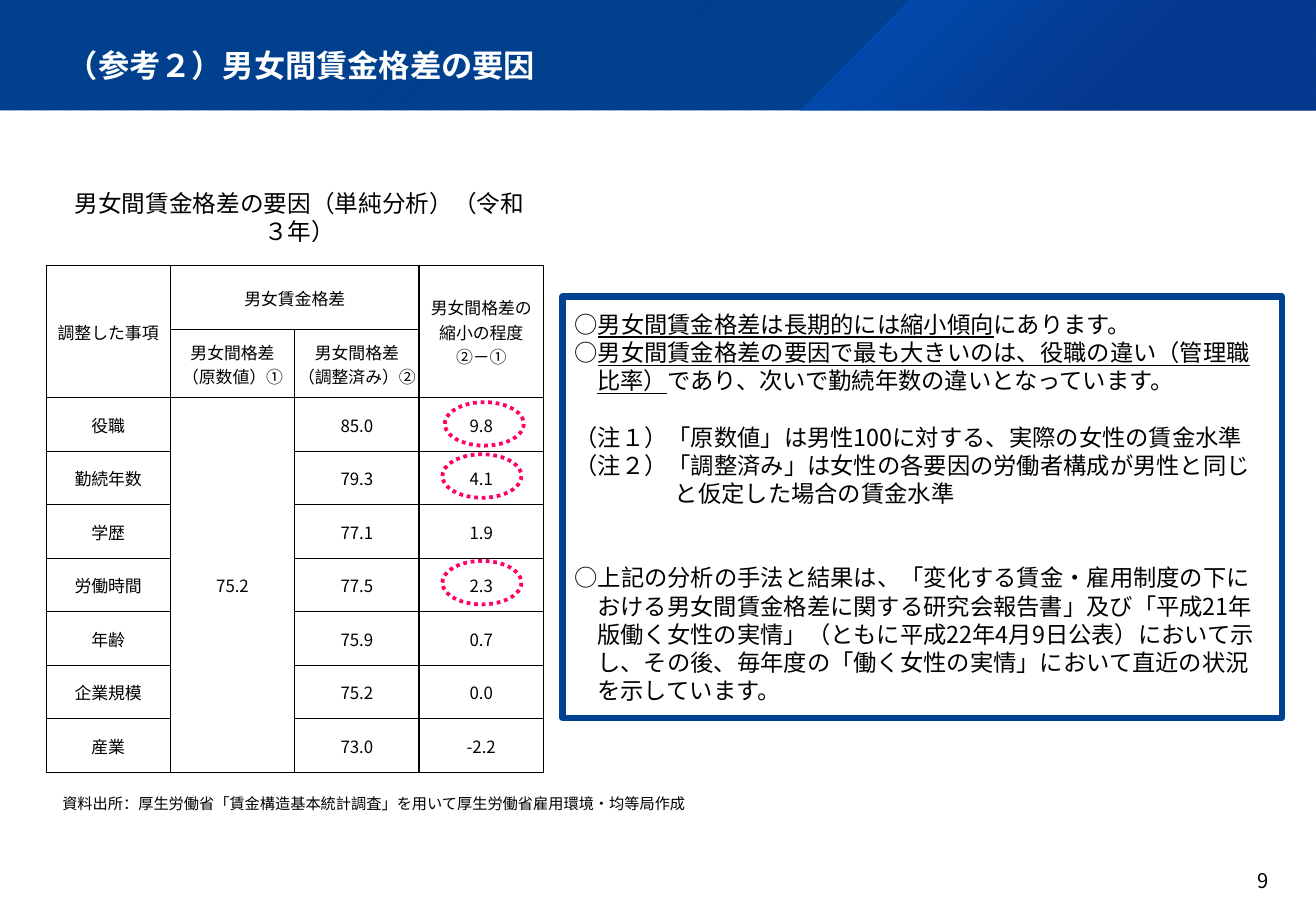
from lxml.etree import SubElement
from pptx import Presentation
from pptx.dml.color import RGBColor as RGB
from pptx.enum.dml import MSO_LINE as Dash, MSO_PATTERN as Pattern
from pptx.enum.shapes import MSO_SHAPE as Shape
from pptx.enum.text import MSO_ANCHOR as Anchor, MSO_AUTO_SIZE as Fit, PP_ALIGN as Align
from pptx.oxml import parse_xml
from pptx.oxml.ns import nsdecls, qn
from pptx.util import Cm, Pt


class Theme:
    font = "Noto Sans CJK JP"
    navy = RGB.from_string("004292")
    stripe = RGB.from_string("003579")
    pink = RGB.from_string("FF0066")
    black = RGB.from_string("000000")
    white = RGB.from_string("FFFFFF")
    title, head, body, page, cell, source = 18.5, 14, 13.8, 12, 10, 9
    pitch = 16.7


def style(para, size, color=Theme.black, align=Align.LEFT):
    para.alignment = align
    font = para.font
    font.size, font.name = Pt(size), Theme.font
    font.color.rgb = color
    SubElement(para._p.pPr.find(qn("a:defRPr")), qn("a:ea"), typeface=Theme.font)


def label(left, top, width, height, text, size, align):
    frame = slide.shapes.add_textbox(Cm(left), Cm(top), Cm(width), Cm(height)).text_frame
    frame.word_wrap = True
    frame.text = text
    style(frame.paragraphs[0], size, align=align)
    return frame


deck = Presentation()
deck.slide_width, deck.slide_height = Cm(27.51), Cm(19.05)
slide = deck.slides.add_slide(deck.slide_layouts[5])
shapes = slide.shapes

band = shapes.add_shape(Shape.RECTANGLE, 0, 0, deck.slide_width, Cm(2.31))
band.shadow.inherit = False
band.line.fill.background()
band.fill.patterned()
band.fill.pattern = Pattern.DARK_UPWARD_DIAGONAL
band.fill.fore_color.rgb = Theme.stripe
band.fill.back_color.rgb = Theme.navy

path = shapes.build_freeform(Cm(19.02), 0)
path.add_line_segments(
    [(Cm(27.51), 0), (Cm(27.51), Cm(2.31)), (Cm(16.71), Cm(2.31))], close=True)
wedge = path.convert_to_shape()
wedge.shadow.inherit = False
wedge.line.fill.background()
wedge.element.spPr.find(qn("a:custGeom")).addnext(parse_xml(
    f'<a:gradFill {nsdecls("a")}><a:gsLst>'
    '<a:gs pos="0"><a:srgbClr val="0064DF"><a:alpha val="50000"/></a:srgbClr></a:gs>'
    '<a:gs pos="62000"><a:srgbClr val="0C338E"><a:alpha val="55000"/></a:srgbClr></a:gs>'
    '</a:gsLst><a:path path="circle"><a:fillToRect r="100000" b="100000"/></a:path>'
    '</a:gradFill>'))

title = shapes.title
for back in (band, wedge):
    title.element.addprevious(back.element)
title.left, title.top, title.width, title.height = Cm(1.4), Cm(0.64), Cm(25.4), Cm(1.27)
frame = title.text_frame
frame.text = "（参考２）男女間賃金格差の要因"
frame.auto_size = Fit.NONE
frame.vertical_anchor = Anchor.MIDDLE
frame.margin_left = frame.margin_right = frame.margin_bottom = 0
frame.margin_top = Cm(0.28)
para = frame.paragraphs[0]
style(para, Theme.title, Theme.white)
para.font.bold = True
para.line_spacing = 0.9

box = shapes.add_shape(Shape.RECTANGLE, Cm(11.76), Cm(6.2), Cm(15.04), Cm(8.81))
box.shadow.inherit = False
box.fill.background()
box.line.color.rgb, box.line.width = Theme.navy, Pt(3.75)
frame = box.text_frame
frame.word_wrap = True
frame.vertical_anchor = Anchor.MIDDLE
notes = [
    (0, 0.48, ["○", "男女間賃金格差は長期的には縮小傾向", "にあります。"]),
    (0, 0.48, ["○", "男女間賃金格差の要因で最も大きいのは、役職の違い（管理職比率）",
               "であり、次いで勤続年数の違いとなっています。"]),
    (1, 0.48, ["（注１）「原数値」は男性100に対する、実際の女性の賃金水準"]),
    (0, 0.48, ["（注２）「調整済み」は女性の各要因の労働者構成が男性と同じ"]),
    (0, 2.1, ["と仮定した場合の賃金水準"]),
    (2, 0.48, ["○上記の分析の手法と結果は、「変化する賃金・雇用制度の下における男女間賃金格差に"
               "関する研究会報告書」及び「平成21年版働く女性の実情」（ともに平成22年4月9日公表）に"
               "おいて示し、その後、毎年度の「働く女性の実情」において直近の状況を示しています。"]),
]
for i, (gap, margin, parts) in enumerate(notes):
    para = frame.add_paragraph() if i else frame.paragraphs[0]
    style(para, Theme.body)
    para.line_spacing = Pt(Theme.pitch)
    para.space_before = Pt(gap * Theme.pitch)
    para._p.pPr.set("marL", str(Cm(margin)))
    para._p.pPr.set("indent", str(Cm(-0.48 if margin < 1 else 0)))
    for j, part in enumerate(parts):
        run = para.add_run()
        run.text = part
        if j == 1:
            run.font.underline = True

label(0.36, 16.48, 14.2, 1.22,
      "資料出所：厚生労働省「賃金構造基本統計調査」を用いて厚生労働省雇用環境・均等局作成",
      Theme.source, Align.RIGHT)
head = label(1.3, 4.14, 9.93, 0.79, "男女間賃金格差の要因（単純分析）（令和３年）",
             Theme.head, Align.CENTER)
head.word_wrap = False
head.vertical_anchor = Anchor.MIDDLE

rows = [
    ["調整した事項", "男女賃金格差", "", "男女間格差の\n縮小の程度\v②－①"],
    ["", "男女間格差\n（原数値）①", "男女間格差\n（調整済み）②", ""],
    ["役職", "75.2", "85.0", "9.8"],
    ["勤続年数", "", "79.3", "4.1"],
    ["学歴", "", "77.1", "1.9"],
    ["労働時間", "", "77.5", "2.3"],
    ["年齢", "", "75.9", "0.7"],
    ["企業規模", "", "75.2", "0.0"],
    ["産業", "", "73.0", "-2.2"],
]
table = shapes.add_table(9, 4, Cm(0.96), Cm(5.54), Cm(10.4), Cm(10.61)).table
table.first_row = table.horz_banding = False
for col in table.columns:
    col.width = Cm(2.6)
for row, high in zip(table.rows, [1.35, 1.42] + [1.12] * 7):
    row.height = Cm(high)
for r, texts in enumerate(rows):
    for c, text in enumerate(texts):
        cell = table.cell(r, c)
        cell.margin_left = cell.margin_right = cell.margin_top = Cm(0.03)
        cell.margin_bottom = 0
        cell.vertical_anchor = Anchor.MIDDLE
        cell.text = text
        for para in cell.text_frame.paragraphs:
            style(para, Theme.cell, align=Align.CENTER)
        for side in "LRTB":
            thick = (side == "R" and c >= 2) or (side == "L" and c == 3)
            edge = SubElement(cell._tc.tcPr, qn(f"a:ln{side}"), w=str(Pt(1 if thick else 0.5)))
            fill = SubElement(edge, qn("a:solidFill"))
            SubElement(fill, qn("a:srgbClr"), val=str(Theme.black))
        cell.fill.background()
for r, c, end, last in [(0, 0, 1, 0), (0, 1, 0, 2), (0, 3, 1, 3), (2, 1, 8, 1)]:
    table.cell(r, c).merge(table.cell(end, last))

page = label(24.77, 18.16, 1.75, 0.76, "9", Theme.page, Align.RIGHT)
page.margin_left = page.margin_right = page.margin_top = page.margin_bottom = 0

for left, top in [(9.25, 9.5), (9.3, 8.41), (9.25, 11.73)]:
    ring = shapes.add_shape(Shape.OVAL, Cm(left), Cm(top), Cm(1.65), Cm(0.91))
    ring.shadow.inherit = False
    ring.fill.background()
    ring.line.color.rgb, ring.line.width = Theme.pink, Pt(2.25)
    ring.line.dash_style = Dash.ROUND_DOT

deck.save("out.pptx")
